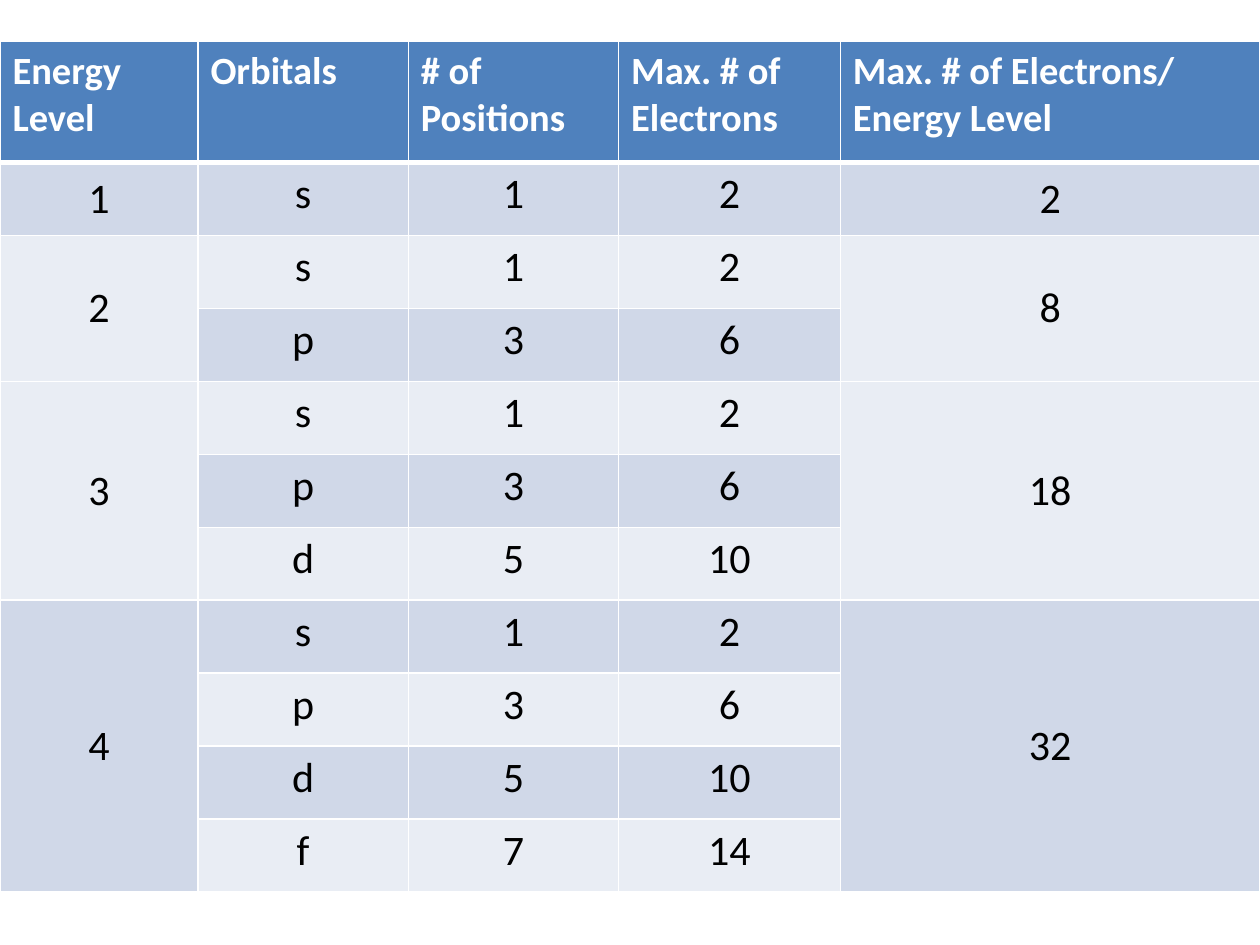
from lxml import etree
from pptx import Presentation
from pptx import util as u
from pptx.dml.color import RGBColor
from pptx.enum import text
from pptx.oxml import ns

COLOURS = {
    "header": "4F81BD",
    "dark": "D0D8E8",
    "light": "E9EDF4",
    "white": "FFFFFF",
    "black": "000000",
}
HEADINGS = ["Energy Level", "Orbitals", "# of Positions", "Max. # of Electrons",
            "Max. # of Electrons/ Energy Level"]
ORBITALS = [("s", 1), ("p", 3), ("d", 5), ("f", 7)]
LEVELS = 4
COLUMN_WIDTHS = [3.99, 4.24, 4.24, 4.47, 8.46]
HEADER_HEIGHT, ROW_HEIGHT = 2.44, 1.47


def write_cell(cell, content, fill, colour="black", size=24, bold=False,
               align=text.PP_ALIGN.CENTER, anchor=text.MSO_ANCHOR.TOP, top=1, bottom=1):
    properties = cell._tc.get_or_add_tcPr()
    for side, width in (("L", 1), ("R", 1), ("T", top), ("B", bottom)):
        line = etree.SubElement(properties, ns.qn(f"a:ln{side}"), w=str(u.Pt(width)))
        solid = etree.SubElement(line, ns.qn("a:solidFill"))
        etree.SubElement(solid, ns.qn("a:srgbClr"), val=COLOURS["white"])
    cell.fill.solid()
    cell.fill.fore_color.rgb = RGBColor.from_string(COLOURS[fill])
    cell.vertical_anchor = anchor
    para = cell.text_frame.paragraphs[0]
    para.alignment = align
    if content:
        span = para.add_run()
        span.text = content
        span.font.name = "Calibri"
        span.font.size = u.Pt(size)
        span.font.bold = bold
        span.font.color.rgb = RGBColor.from_string(COLOURS[colour])


deck = Presentation()
deck.slide_width, deck.slide_height = u.Cm(25.4), u.Cm(19.05)
page = deck.slides.add_slide(deck.slide_layouts[6])

row_count = 1 + sum(range(1, LEVELS + 1))
table = page.shapes.add_table(
    row_count, len(HEADINGS), u.Cm(0), u.Cm(0.84), u.Cm(sum(COLUMN_WIDTHS)),
    u.Cm(HEADER_HEIGHT + ROW_HEIGHT * (row_count - 1))).table
for column, width in zip(table.columns, COLUMN_WIDTHS):
    column.width = u.Cm(width)
for index, table_row in enumerate(table.rows):
    table_row.height = u.Cm(ROW_HEIGHT if index else HEADER_HEIGHT)

for column, heading in enumerate(HEADINGS):
    write_cell(table.cell(0, column), heading, "header", colour="white", size=22,
               bold=True, align=text.PP_ALIGN.LEFT, bottom=3)

row = 1
for level in range(1, LEVELS + 1):
    first = row
    for orbital, positions in ORBITALS[:level]:
        band = "dark" if row % 2 else "light"
        top = 3 if row == 1 else 1
        for column, value in enumerate((orbital, positions, 2 * positions), 1):
            write_cell(table.cell(row, column), str(value), band, top=top)
        for column, total in ((0, level), (4, 2 * level ** 2)):
            write_cell(table.cell(row, column), str(total) if row == first else "", band,
                       anchor=text.MSO_ANCHOR.MIDDLE, top=top)
        row += 1
    if level > 1:
        for column in (0, 4):
            table.cell(first, column).merge(table.cell(row - 1, column))

deck.save("out.pptx")
